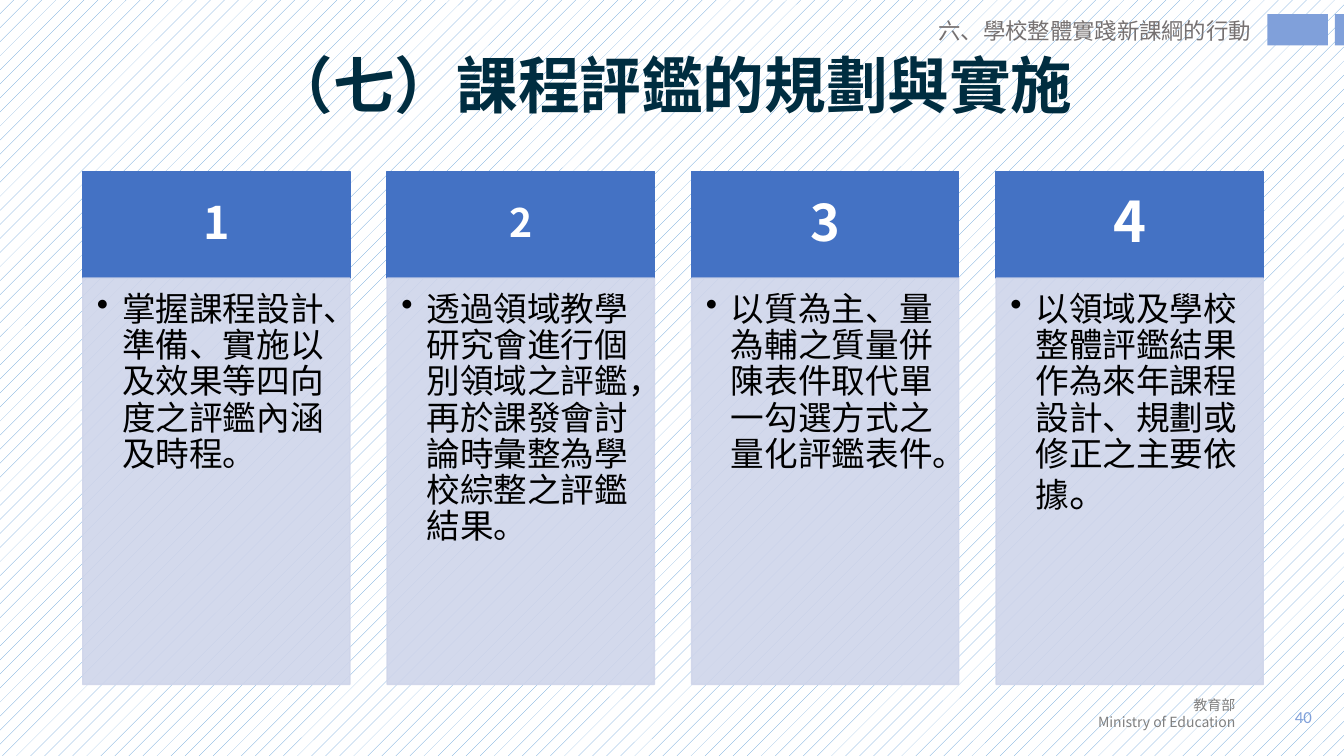
from dataclasses import dataclass
from typing import Optional

from lxml.etree import SubElement
from pptx import Presentation
from pptx.dml.color import RGBColor
from pptx.enum.dml import MSO_PATTERN
from pptx.enum.shapes import MSO_SHAPE
from pptx.enum.text import MSO_ANCHOR, PP_ALIGN
from pptx.oxml.ns import qn
from pptx.shapes.autoshape import Shape
from pptx.slide import Slide
from pptx.util import Inches, Pt


@dataclass(frozen=True)
class Theme:
    cjk_font: str = "Noto Sans CJK SC"
    number_font: str = "Calibri"
    title: str = "002D40"
    section: str = "767171"
    footer: str = "808080"
    accent: str = "80A0DA"
    header: str = "4472C4"
    panel: str = "CFD5EA"
    white: str = "FFFFFF"
    black: str = "000000"
    hatch: str = "5B9BD5"
    title_size: int = 44
    body_size: int = 24
    full_stop_size: int = 28
    section_size: int = 16
    page_size: int = 12
    footer_size: int = 10


@dataclass(frozen=True)
class Box:
    left: float
    top: float
    width: float
    height: float

    def lengths(self) -> tuple:
        return tuple(Inches(v) for v in (self.left, self.top, self.width, self.height))


@dataclass(frozen=True)
class Step:
    number: str
    number_size: int
    side_inset: float
    end_inset: float
    body: str
    large_ending: str = ""


THEME = Theme()
STEPS = [
    Step("1", 32, 0.25, 0.14, "掌握課程設計、準備、實施以及效果等四向度之評鑑內涵及時程。"),
    Step("2", 28, 0.22, 0.12,
         "透過領域教學研究會進行個別領域之評鑑，再於課發會討論時彙整為學校綜整之評鑑結果。"),
    Step("3", 36, 0.28, 0.16, "以質為主、量為輔之質量併陳表件取代單一勾選方式之量化評鑑表件。"),
    Step("4", 40, 0.31, 0.18,
         "以領域及學校整體評鑑結果作為來年課程設計、規劃或修正之主要依據", "。"),
]
FIRST_LEFT, STEP_PITCH, STEP_WIDTH = 0.82, 3.02, 2.65
HEADER_TOP, HEADER_HEIGHT, PANEL_HEIGHT = 1.7, 1.06, 4.03


def write(shape: Shape, text: str, *, size: int, color: str, font: str = THEME.cjk_font,
          bold: bool = False, align: PP_ALIGN = PP_ALIGN.LEFT,
          anchor: MSO_ANCHOR = MSO_ANCHOR.TOP, wrap: bool = True,
          insets: tuple = (0.1, 0.05, 0.1, 0.05), line_spacing: Optional[float] = None,
          after: float = 0, bullet: bool = False, ending: str = "",
          ending_size: int = THEME.full_stop_size) -> None:
    """Fill a shape with text, one paragraph a line; the ending has its own size."""
    frame = shape.text_frame
    frame.word_wrap = wrap
    frame.vertical_anchor = anchor
    frame.margin_left, frame.margin_top, frame.margin_right, frame.margin_bottom = (
        Inches(v) for v in insets)
    for index, line in enumerate(text.split("\n")):
        paragraph = frame.paragraphs[0] if index == 0 else frame.add_paragraph()
        paragraph.alignment = align
        if line_spacing:
            paragraph.line_spacing = line_spacing
        if after:
            paragraph.space_after = Pt(round(size * after, 1))
        if bullet:
            paragraph.level = 1
            properties = paragraph._p.get_or_add_pPr()
            properties.set("marL", str(Inches(0.25)))
            properties.set("indent", str(Inches(-0.25)))
            SubElement(properties, qn("a:buChar"), char="•")
        for content, points in ((line, size), (ending, ending_size)):
            if content:
                run = paragraph.add_run()
                run.text = content
                run.font.size = Pt(points)
                run.font.bold = bold
                run.font.name = font
                run.font.color.rgb = RGBColor.from_string(color)
                SubElement(run._r.get_or_add_rPr(), qn("a:ea"), typeface=font)


def add_text(slide: Slide, box: Box, text: str, **text_format) -> None:
    write(slide.shapes.add_textbox(*box.lengths()), text, **text_format)


def add_block(slide: Slide, box: Box, color: str, *, outlined: bool = False,
              opacity: int = 100) -> Shape:
    block = slide.shapes.add_shape(MSO_SHAPE.RECTANGLE, *box.lengths())
    block.shadow.inherit = False
    block.fill.solid()
    block.fill.fore_color.rgb = RGBColor.from_string(color)
    if outlined:
        block.line.color.rgb = RGBColor.from_string(color)
        block.line.width = Pt(1)
    else:
        block.line.fill.background()
    if opacity < 100:
        for shade in block._element.spPr.iter(qn("a:srgbClr")):
            SubElement(shade, qn("a:alpha"), val=str(opacity * 1000))
    return block


def add_step(slide: Slide, step: Step, left: float) -> None:
    header = add_block(slide, Box(left, HEADER_TOP, STEP_WIDTH, HEADER_HEIGHT),
                       THEME.header, outlined=True)
    write(header, step.number, size=step.number_size, color=THEME.white, bold=True,
          align=PP_ALIGN.CENTER, anchor=MSO_ANCHOR.MIDDLE, line_spacing=0.9, after=0.35,
          insets=(step.side_inset, step.end_inset) * 2)
    panel = add_block(slide, Box(left, HEADER_TOP + HEADER_HEIGHT, STEP_WIDTH, PANEL_HEIGHT),
                      THEME.panel, outlined=True, opacity=90)
    write(panel, step.body, size=THEME.body_size, color=THEME.black, line_spacing=0.9,
          after=0.15, bullet=True, insets=(0.14, 0.14, 0.19, 0.21), ending=step.large_ending)


def set_background(slide: Slide) -> None:
    fill = slide.background.fill
    fill.patterned()
    fill.pattern = MSO_PATTERN.PERCENT_5
    fill.fore_color.rgb = RGBColor.from_string(THEME.hatch)
    fill.back_color.rgb = RGBColor.from_string(THEME.white)


def main() -> None:
    deck = Presentation()
    deck.slide_width, deck.slide_height = Inches(13.33), Inches(7.5)
    slide = deck.slides.add_slide(deck.slide_layouts[6])
    set_background(slide)

    add_text(slide, Box(2.17, 0.35, 9, 1.05), "（七）課程評鑑的規劃與實施",
             size=THEME.title_size, color=THEME.title, bold=True, align=PP_ALIGN.CENTER,
             anchor=MSO_ANCHOR.MIDDLE, line_spacing=0.9)
    for left, width in ((12.57, 0.6), (13.24, 0.09)):
        add_block(slide, Box(left, 0.14, width, 0.31), THEME.accent)
    add_text(slide, Box(9.21, 0.12, 3.66, 0.37), "六、學校整體實踐新課綱的行動",
             size=THEME.section_size, color=THEME.section)
    add_text(slide, Box(10.86, 6.96, 2.25, 0.3), "40", size=THEME.page_size,
             color=THEME.accent, font=THEME.number_font, align=PP_ALIGN.RIGHT,
             anchor=MSO_ANCHOR.MIDDLE)
    add_text(slide, Box(10.75, 6.86, 1.6, 0.44), "教育部\nMinistry of Education",
             size=THEME.footer_size, color=THEME.footer, align=PP_ALIGN.RIGHT, wrap=False)
    for index, step in enumerate(STEPS):
        add_step(slide, step, FIRST_LEFT + index * STEP_PITCH)

    deck.save("out.pptx")


if __name__ == "__main__":
    main()
